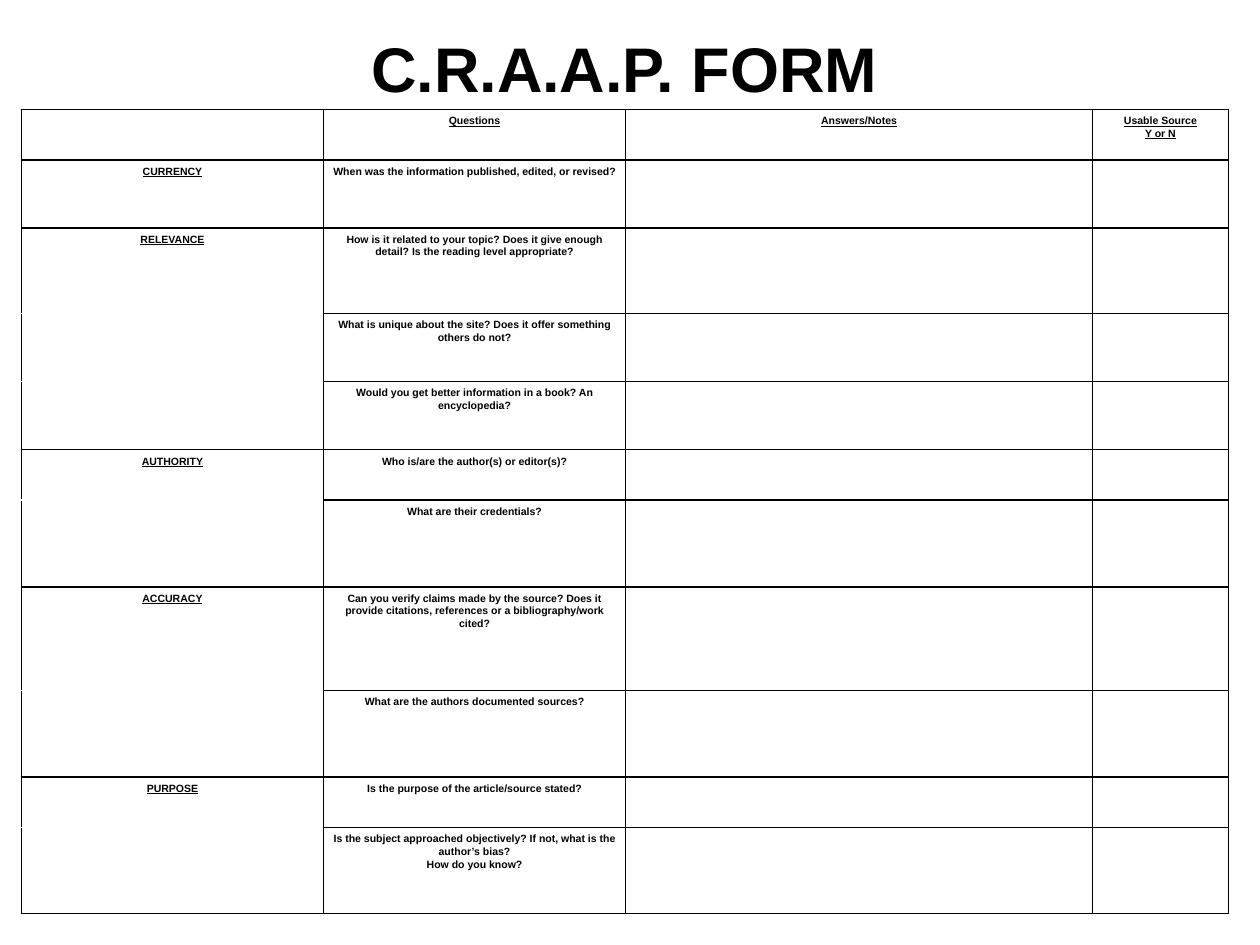
from lxml.etree import SubElement
from pptx import Presentation
from pptx.dml.color import RGBColor
from pptx.enum.text import MSO_ANCHOR, PP_ALIGN
from pptx.oxml.ns import qn
from pptx.util import Inches, Pt

SLIDE_WIDTH, SLIDE_HEIGHT = Inches(10), Inches(7.5)
BLACK, WHITE = "000000", "FFFFFF"
TITLE_FORMAT = {"name": "Arial", "size": Pt(36), "bold": True, "underline": False}
LABEL_FORMAT = {"name": "Arial", "size": Pt(6), "bold": True, "underline": True}
QUESTION_FORMAT = {**LABEL_FORMAT, "underline": False}
COLUMNS = [2.4, 2.4, 3.71, 1.08]
HEADER_HEIGHT = 0.4
HEADERS = ["", "Questions", "Answers/Notes", "Usable Source\nY or N"]
SECTIONS = {
    "CURRENCY": [(0.54, "When was the information published, edited, or revised?")],
    "RELEVANCE": [
        (0.68, "How is it related to your topic? Does it give enough detail? "
               "Is the reading level appropriate?"),
        (0.54, "What is unique about the site? Does it offer something others do not?"),
        (0.54, "Would you get better information in a book? An encyclopedia?"),
    ],
    "AUTHORITY": [
        (0.4, "Who is/are the author(s) or editor(s)?"),
        (0.69, "What are their credentials?"),
    ],
    "ACCURACY": [
        (0.82, "Can you verify claims made by the source? Does it provide citations, "
               "references or a bibliography/work cited?"),
        (0.69, "What are the authors documented sources?"),
    ],
    "PURPOSE": [
        (0.4, "Is the purpose of the article/source stated?"),
        (0.68, "Is the subject approached objectively? If not, what is the author’s bias?"
               "\vHow do you know?"),
    ],
}


def color(value):
    """Return the colour for a hex string."""
    return RGBColor.from_string(value)


def write_text(text_frame, text, text_format, line_spacing=None):
    """Fill a text frame with centred, formatted text."""
    text_frame.text = text
    for paragraph in text_frame.paragraphs:
        paragraph.alignment = PP_ALIGN.CENTER
        paragraph.line_spacing = line_spacing
        for run in paragraph.runs:
            for name, value in text_format.items():
                setattr(run.font, name, value)
            run.font.color.rgb = color(BLACK)


def draw_borders(cell, top=BLACK, bottom=BLACK):
    """Draw one-point borders on the four sides of a cell."""
    properties = cell._tc.get_or_add_tcPr()
    sides = {"a:lnL": BLACK, "a:lnR": BLACK, "a:lnT": top, "a:lnB": bottom}
    for tag, value in sides.items():
        line = SubElement(properties, qn(tag), w=str(Pt(1)))
        fill = SubElement(line, qn("a:solidFill"))
        SubElement(fill, qn("a:srgbClr"), val=value)


def format_cell(cell, text, text_format, top=BLACK, bottom=BLACK):
    """Set the margins, text, borders and fill of a cell."""
    for side in ("left", "right", "top", "bottom"):
        setattr(cell, f"margin_{side}", Inches(0.04))
    if text:
        write_text(cell.text_frame, text, text_format, 1.07)
    draw_borders(cell, top, bottom)
    cell.fill.background()


def add_title(slide, left, top, width, height):
    """Place the form title in the given box."""
    text_frame = slide.shapes.add_textbox(left, top, width, height).text_frame
    text_frame.word_wrap = True
    text_frame.vertical_anchor = MSO_ANCHOR.BOTTOM
    write_text(text_frame, "C.R.A.A.P. FORM", TITLE_FORMAT)


def add_form(slide, left, top, width, height):
    """Place the evaluation table in the given box."""
    row_heights = [HEADER_HEIGHT] + [
        share for questions in SECTIONS.values() for share, _ in questions
    ]
    frame = slide.shapes.add_table(
        len(row_heights), len(COLUMNS), left, top, width, height
    )
    table = frame.table
    table.first_row = table.horz_banding = False
    for column, share in zip(table.columns, COLUMNS):
        column.width = int(width * share / sum(COLUMNS))
    for row, share in zip(table.rows, row_heights):
        row.height = int(height * share / sum(row_heights))

    for cell, header in zip(table.rows[0].cells, HEADERS):
        format_cell(cell, header, LABEL_FORMAT)
    rows = iter(list(table.rows)[1:])
    for section, questions in SECTIONS.items():
        for index, (_, question) in enumerate(questions):
            label, prompt, *answers = next(rows).cells
            is_first, is_last = index == 0, index == len(questions) - 1
            format_cell(
                label,
                section if is_first else "",
                LABEL_FORMAT,
                top=BLACK if is_first else WHITE,
                bottom=BLACK if is_last else WHITE,
            )
            format_cell(prompt, question, QUESTION_FORMAT)
            for answer in answers:
                format_cell(answer, "", QUESTION_FORMAT)


def main():
    """Build the form slide and save it."""
    presentation = Presentation()
    presentation.slide_width, presentation.slide_height = SLIDE_WIDTH, SLIDE_HEIGHT
    slide = presentation.slides.add_slide(presentation.slide_layouts[6])
    slide.background.fill.solid()
    slide.background.fill.fore_color.rgb = color(WHITE)
    add_title(slide, Inches(0.33), Inches(0.17), Inches(9.25), Inches(0.71))
    add_form(slide, Inches(0.17), Inches(0.87), Inches(9.58), Inches(6.38))
    presentation.save("out.pptx")


if __name__ == "__main__":
    main()
